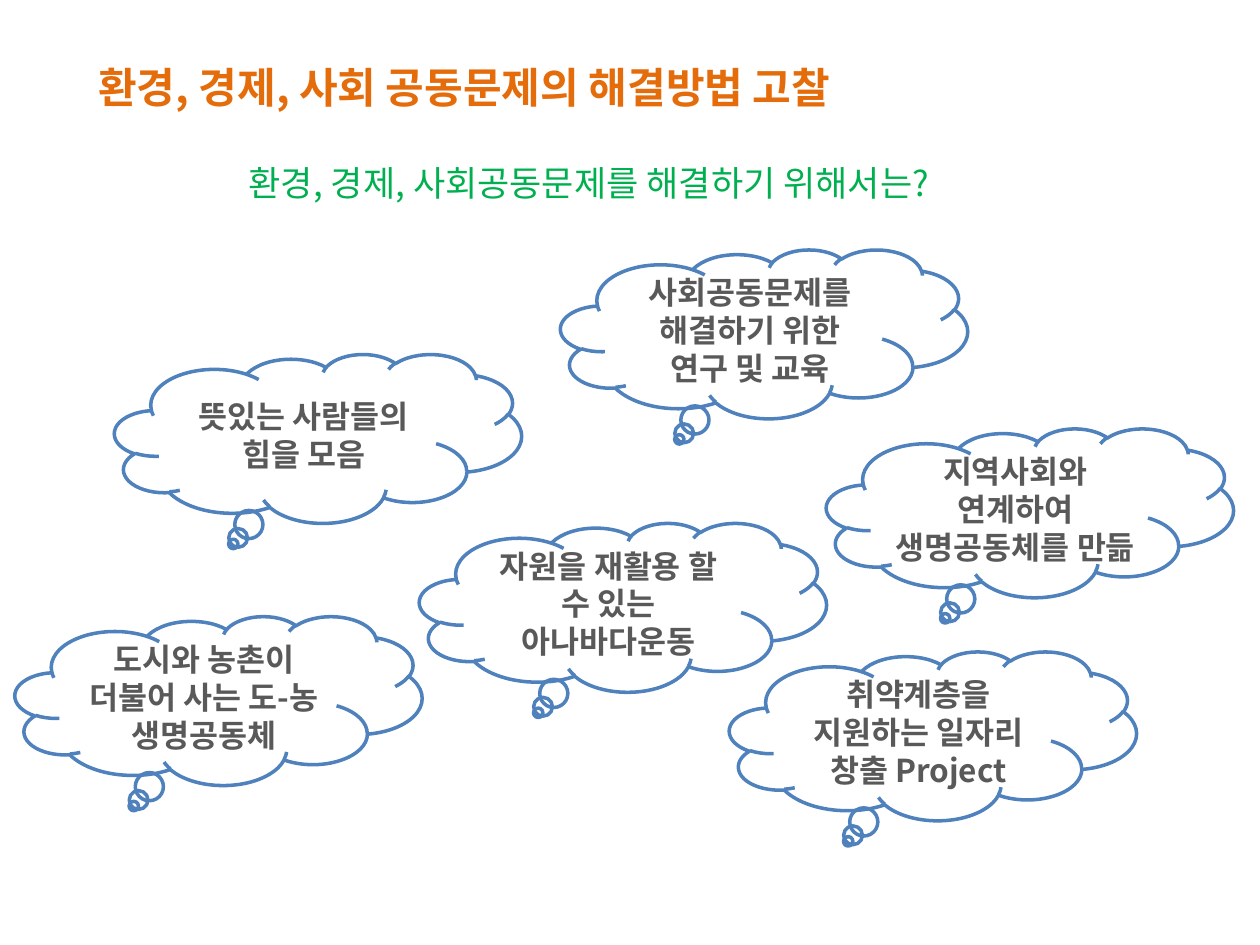
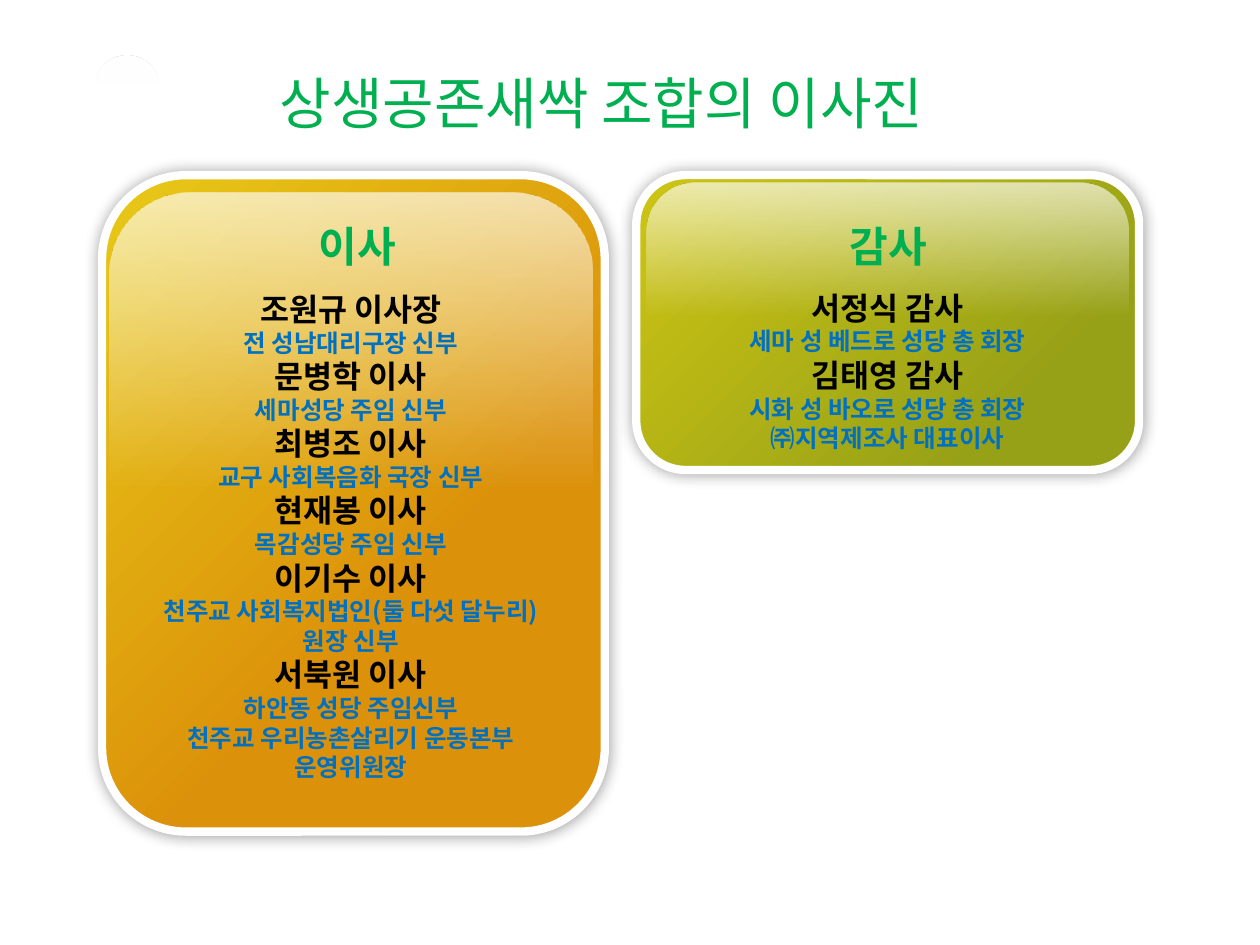
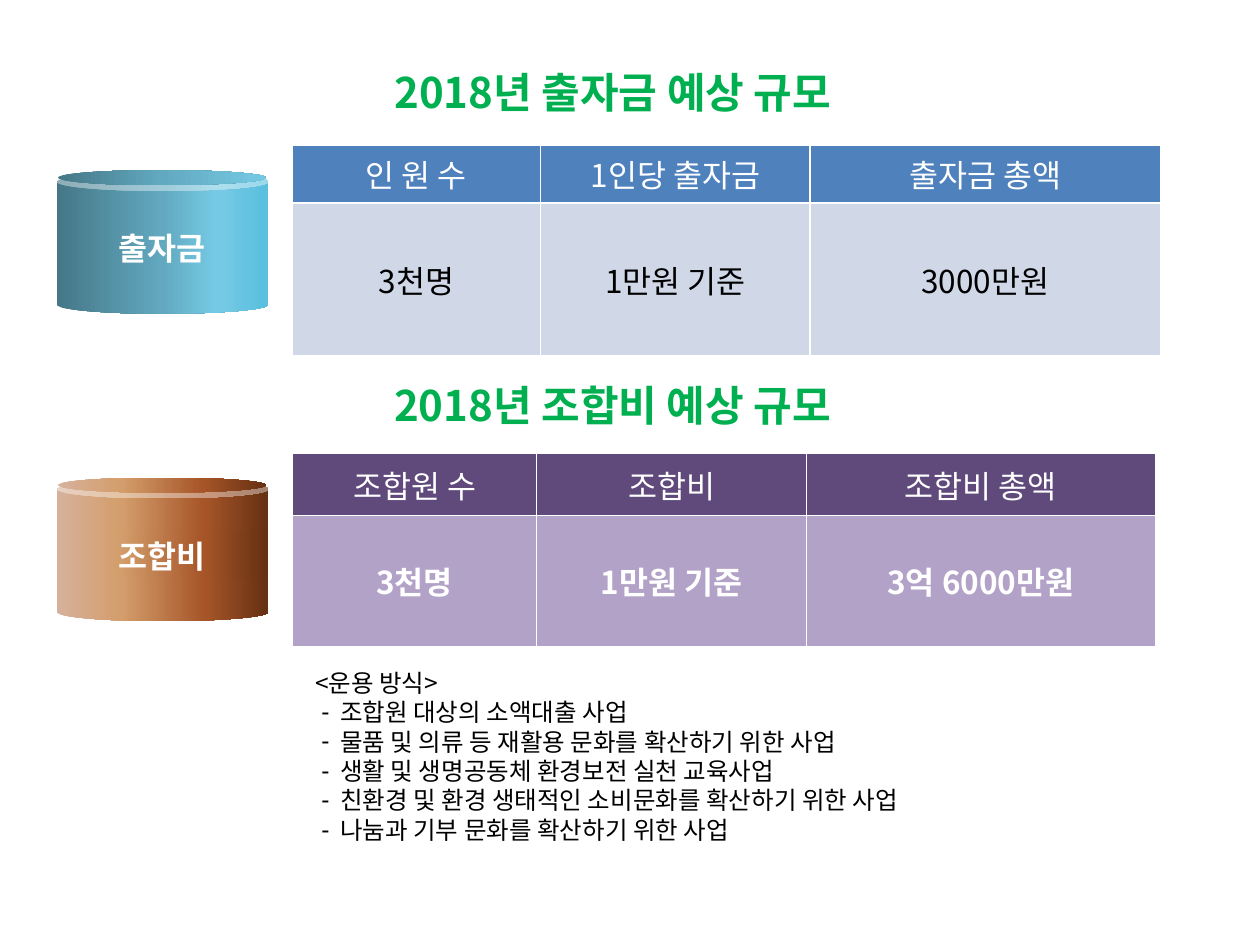
import pptx
import pptx.dml.color
import pptx.enum.shapes
import pptx.enum.text
import pptx.oxml
import pptx.oxml.ns
import pptx.util

In, Pt = pptx.util.Inches, pptx.util.Pt
SHAPE = pptx.enum.shapes.MSO_SHAPE
ALIGN = pptx.enum.text.PP_ALIGN
ANCHOR = pptx.enum.text.MSO_ANCHOR
NS = pptx.oxml.ns.nsdecls("a")

FONT = "Noto Sans CJK KR"
GREEN, ORANGE, BLUE = "00B050", "E46C0A", "0070C0"
OUTLINE, GREY, BLACK, WHITE = "4F81BD", "595959", "000000", "FFFFFF"
GLOSS = [(0, WHITE, 65), (45, WHITE, 0)]

CLOUD_SIZE = (3.23, 1.34)
CLOUDS = [
    (4.45, 1.98, ["사회공동문제를", "해결하기 위한", "연구 및 교육"]),
    (0.91, 2.81, ["뜻있는 사람들의 힘을 모음"]),
    (6.56, 3.4, ["지역사회와 연계하여 생명공동체를 만듦"]),
    (3.33, 4.15, ["자원을 재활용 할 수 있는", "아나바다운동"]),
    (0.12, 4.89, ["도시와 농촌이 더불어 사는 도-농 생명공동체"]),
    (5.79, 5.17, ["취약계층을 지원하는 일자리 창출 Project"]),
]

BOARDS = [
    {"head": "이사", "head_box": (1.38, 1.7, 2.91, 0.5),
     "list_box": (0.87, 2.25, 3.83, 4.04),
     "panel": (0.81, 1.39, 3.99, 5.21), "gloss": (0.87, 1.53, 3.83, 5.21),
     "stops": [(37, "DC910A"), (100, "E7C917")],
     "members": [
         ("조원규 이사장", ["전 성남대리구장 신부"]),
         ("문병학 이사", ["세마성당 주임 신부"]),
         ("최병조 이사", ["교구 사회복음화 국장 신부"]),
         ("현재봉 이사", ["목감성당 주임 신부"]),
         ("이기수 이사", ["천주교 사회복지법인(둘 다섯 달누리)", "원장 신부"]),
         ("서북원 이사", ["하안동 성당 주임신부", "천주교 우리농촌살리기 운동본부",
                     "운영위원장"]),
     ]},
    {"head": "감사", "head_box": (5.83, 1.7, 2.44, 0.5),
     "list_box": (5.24, 2.24, 3.61, 1.41),
     "panel": (5.05, 1.39, 3.99, 2.34), "gloss": (5.13, 1.45, 3.83, 2.34),
     "stops": [(22, "97A117"), (100, "CEC514")],
     "members": [
         ("서정식 감사", ["세마 성 베드로 성당 총 회장"]),
         ("김태영 감사", ["시화 성 바오로 성당 총 회장", "㈜지역제조사 대표이사"]),
     ]},
]

TEAL = [(0, "457787"), (50, "62A9C0"), (75, "75C9E4"), (78, "75C9E4"), (97, "5BC0DF")]
TEAL_LID = [(0, "457787"), (50, "62A9C0"), (100, "75C9E4")]
COPPER = [(0, "D6B19C"), (30, "D49E6C"), (70, "A65528"), (100, "663012")]
FUNDS = [
    {"label": "출자금", "can_top": 1.37, "body": TEAL, "lid": TEAL_LID, "label_fill": None,
     "table_top": 1.15, "cols": (1.97, 2.14, 2.78), "rows": (0.44, 1.21),
     "fills": ("4F81BD", "D0D8E8"), "value_style": (BLACK, False),
     "cells": [["인 원 수", "1인당 출자금", "출자금 총액"],
               ["3천명", "1만원 기준", "3000만원"]]},
    {"label": "조합비", "can_top": 3.81, "body": COPPER, "lid": COPPER, "label_fill": COPPER,
     "table_top": 3.6, "cols": (1.94, 2.14, 2.77), "rows": (0.49, 1.04),
     "fills": ("604A7B", "B3A2C7"), "value_style": (WHITE, True),
     "cells": [["조합원 수", "조합비", "조합비 총액"],
               ["3천명", "1만원 기준", "3억 6000만원"]]},
]
OPERATIONS = [
    "조합원 대상의 소액대출 사업",
    "물품 및 의류 등 재활용 문화를 확산하기 위한 사업",
    "생활 및 생명공동체 환경보전 실천 교육사업",
    "친환경 및 환경 생태적인 소비문화를 확산하기 위한 사업",
    "나눔과 기부 문화를 확산하기 위한 사업",
]


def rgb(value):
    return pptx.dml.color.RGBColor.from_string(value)


def inches(box):
    return [In(v) for v in box]


def write(tf, lines, align=ALIGN.LEFT, anchor=ANCHOR.TOP):
    """Fill a text frame with (text, size, colour, bold[, bullet]) lines."""
    tf.word_wrap = True
    tf.auto_size = pptx.enum.text.MSO_AUTO_SIZE.NONE
    tf.vertical_anchor = anchor
    for i, (text, size, colour, bold, *bullet) in enumerate(lines):
        p = tf.paragraphs[0] if i == 0 else tf.add_paragraph()
        p.text = text
        p.alignment = align
        p.space_before = Pt(0)
        pPr = p._p.get_or_add_pPr()
        pPr.set("marL", str(In(0.2) if bullet else 0))
        pPr.set("indent", str(In(-0.15) if bullet else 0))
        mark = f'<a:buChar {NS} char="{bullet[0]}"/>' if bullet else f"<a:buNone {NS}/>"
        pPr.append(pptx.oxml.parse_xml(mark))
        font = p.runs[0].font
        font.size, font.bold, font.name = Pt(size), bold, FONT
        font.color.rgb = rgb(colour)
        font._element.append(pptx.oxml.parse_xml(f'<a:ea {NS} typeface="{FONT}"/>'))


def place(ph, box, lines, align=ALIGN.LEFT):
    """Move a placeholder to box, in front of the shapes drawn so far, and fill it."""
    ph.left, ph.top, ph.width, ph.height = inches(box)
    ph._element.getparent().append(ph._element)
    write(ph.text_frame, lines, align)


def add_shape(slide, kind, box, stops=None, angle=0):
    """Add a shape without line or shadow, with a gradient if stops are given."""
    sp = slide.shapes.add_shape(kind, *inches(box))
    sp.shadow.inherit = False
    sp.line.fill.background()
    sp.fill.background()
    if stops:
        gs = "".join(
            f'<a:gs pos="{pos * 1000}"><a:srgbClr val="{colour}">'
            f'<a:alpha val="{(alpha or [100])[0] * 1000}"/></a:srgbClr></a:gs>'
            for pos, colour, *alpha in stops)
        grad = pptx.oxml.parse_xml(
            f'<a:gradFill {NS} rotWithShape="1"><a:gsLst>{gs}</a:gsLst>'
            f'<a:lin ang="{angle * 60000}" scaled="0"/></a:gradFill>')
        spPr = sp._element.spPr
        spPr.replace(spPr.find(pptx.oxml.ns.qn("a:noFill")), grad)
    return sp


def set_line(sp, colour, width):
    sp.line.color.rgb = rgb(colour)
    sp.line.width = Pt(width)


def add_glow(sp):
    """Give a shape a soft dark shadow on all sides."""
    effects = sp._element.spPr.find(pptx.oxml.ns.qn("a:effectLst"))
    effects.append(pptx.oxml.parse_xml(
        f'<a:outerShdw {NS} blurRad="{Pt(9)}" dist="0" dir="0" algn="ctr" rotWithShape="0">'
        f'<a:srgbClr val="{BLACK}"><a:alpha val="39000"/></a:srgbClr></a:outerShdw>'))


def add_fund_table(slide, fund):
    cols, rows = fund["cols"], fund["rows"]
    box = (2.32, fund["table_top"], sum(cols), sum(rows))
    table = slide.shapes.add_table(len(rows), len(cols), *inches(box)).table
    for col, width in zip(table.columns, cols):
        col.width = In(width)
    styles = [(WHITE, False), fund["value_style"]]
    for r, height in enumerate(rows):
        table.rows[r].height = In(height)
        for c, text in enumerate(fund["cells"][r]):
            cell = table.cell(r, c)
            write(cell.text_frame, [(text, 18, *styles[r])], ALIGN.CENTER)
            cell.vertical_anchor = ANCHOR.MIDDLE
            tcPr = cell._tc.get_or_add_tcPr()
            for side in "LRTB":
                tcPr.append(pptx.oxml.parse_xml(
                    f'<a:ln{side} {NS} w="{Pt(1)}"><a:solidFill><a:srgbClr val="{WHITE}"/>'
                    f'</a:solidFill></a:ln{side}>'))
            cell.fill.solid()
            cell.fill.fore_color.rgb = rgb(fund["fills"][r])


def add_fund_can(slide, fund):
    top = fund["can_top"]
    can = add_shape(slide, SHAPE.CAN, (0.45, top, 1.68, 1.12), fund["body"])
    can.adjustments[0] = 0.13
    add_shape(slide, SHAPE.OVAL, (0.46, top - 0.02, 1.65, 0.12), fund["lid"])
    label = add_shape(slide, SHAPE.RECTANGLE, (0.45, top + 0.4, 1.67, 0.38),
                      fund["label_fill"])
    write(label.text_frame, [(fund["label"], 18, WHITE, True)], ALIGN.CENTER)


def solutions_slide(prs):
    slide = prs.slides.add_slide(prs.slide_layouts[0])
    place(slide.shapes.title, (0.68, 0.44, 7.86, 0.5),
          [("환경, 경제, 사회 공동문제의 해결방법 고찰", 24, ORANGE, True)])
    place(slide.placeholders[1], (0.05, 1.23, 9.25, 0.44),
          [("환경, 경제, 사회공동문제를 해결하기 위해서는?", 20, GREEN, False)], ALIGN.CENTER)
    for left, top, lines in CLOUDS:
        cloud = add_shape(slide, SHAPE.CLOUD_CALLOUT, (left, top, *CLOUD_SIZE))
        set_line(cloud, OUTLINE, 2)
        write(cloud.text_frame, [(t, 18, GREY, True) for t in lines],
              ALIGN.CENTER, ANCHOR.MIDDLE)


def board_slide(prs):
    slide = prs.slides.add_slide(prs.slide_layouts[4])
    place(slide.shapes.title, (2.12, 0.49, 6.72, 0.64),
          [("상생공존새싹 조합의 이사진", 32, GREEN, False)])
    add_shape(slide, SHAPE.OVAL, (0.76, 0.44, 0.5, 0.47), GLOSS, 90)
    for i, board in enumerate(BOARDS):
        panel = add_shape(slide, SHAPE.ROUNDED_RECTANGLE, board["panel"], board["stops"], 225)
        set_line(panel, WHITE, 4.75)
        add_glow(panel)
        add_shape(slide, SHAPE.ROUNDED_RECTANGLE, board["gloss"], GLOSS, 90)
        lines = []
        for name, posts in board["members"]:
            lines.append((name, 18, BLACK, True))
            lines += [(post, 14, BLUE, True) for post in posts]
        place(slide.placeholders[2 * i + 1], board["head_box"],
              [(board["head"], 24, GREEN, True)], ALIGN.CENTER)
        place(slide.placeholders[2 * i + 2], board["list_box"], lines, ALIGN.CENTER)


def funds_slide(prs):
    slide = prs.slides.add_slide(prs.slide_layouts[1])
    for fund in FUNDS:
        add_fund_table(slide, fund)
        add_fund_can(slide, fund)
    place(slide.shapes.title, (3.03, 0.48, 4.3, 0.5),
          [("2018년 출자금 예상 규모", 24, GREEN, True)])
    heading = slide.shapes.add_textbox(*inches((3.03, 2.96, 5.51, 0.5)))
    write(heading.text_frame, [("2018년 조합비 예상 규모", 24, GREEN, True)])
    place(slide.placeholders[1], (2.4, 5.25, 6.38, 1.51),
          [("<운용 방식>", 14, BLACK, False)]
          + [(t, 14, BLACK, False, "-") for t in OPERATIONS])


def main():
    prs = pptx.Presentation()
    prs.slide_width, prs.slide_height = In(10), In(7.5)
    solutions_slide(prs)
    board_slide(prs)
    funds_slide(prs)
    prs.save("out.pptx")


if __name__ == "__main__":
    main()
